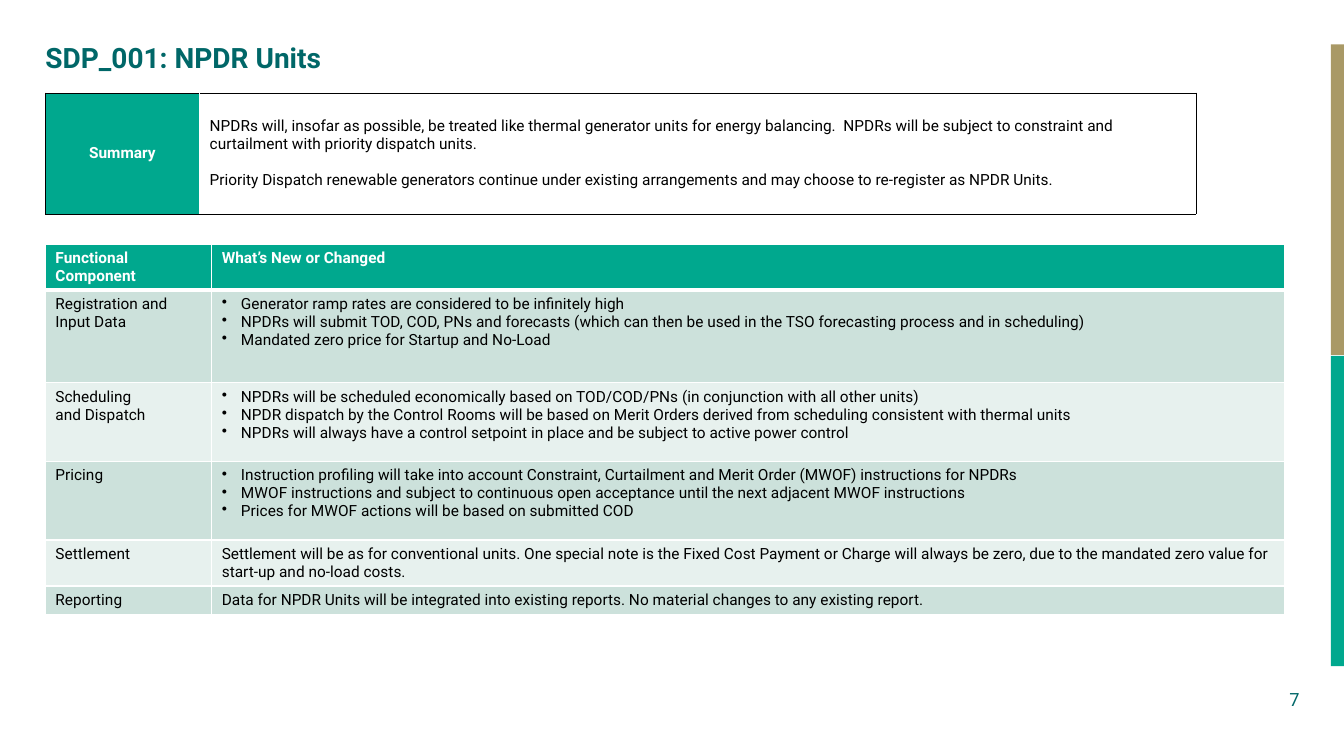
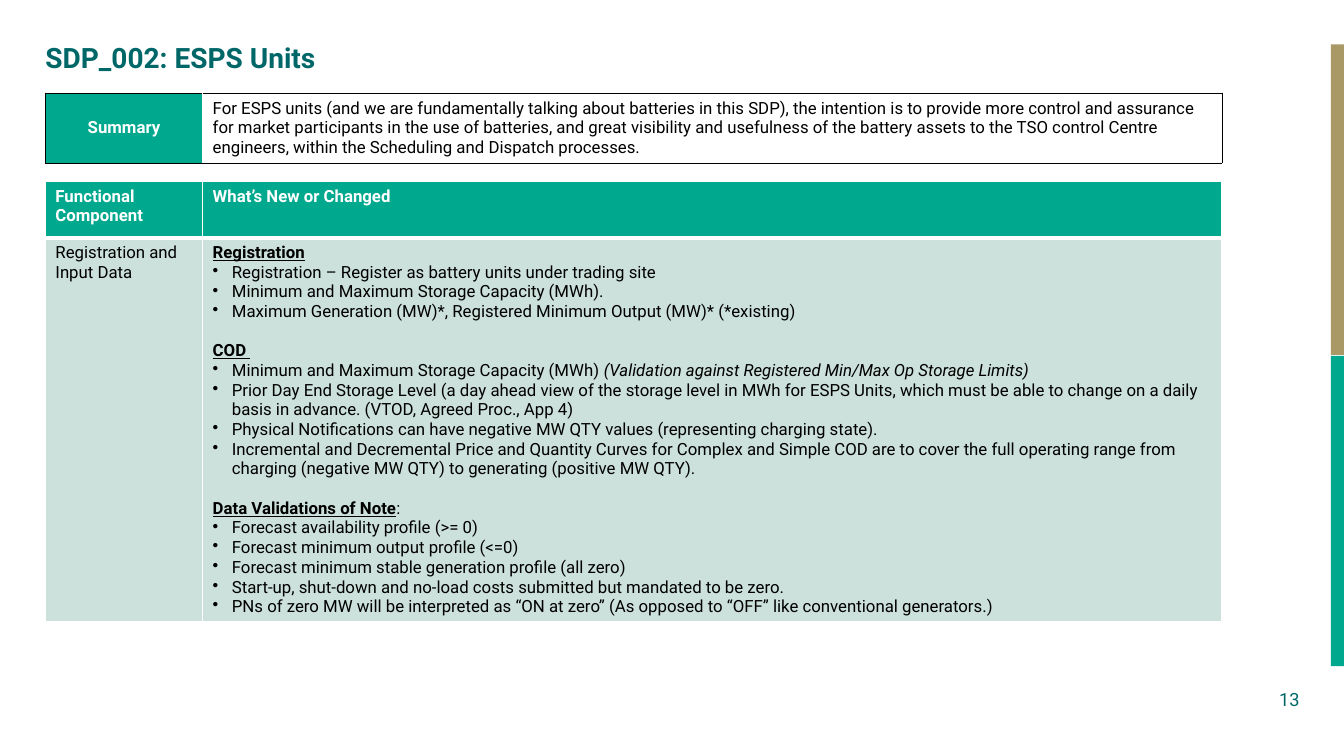
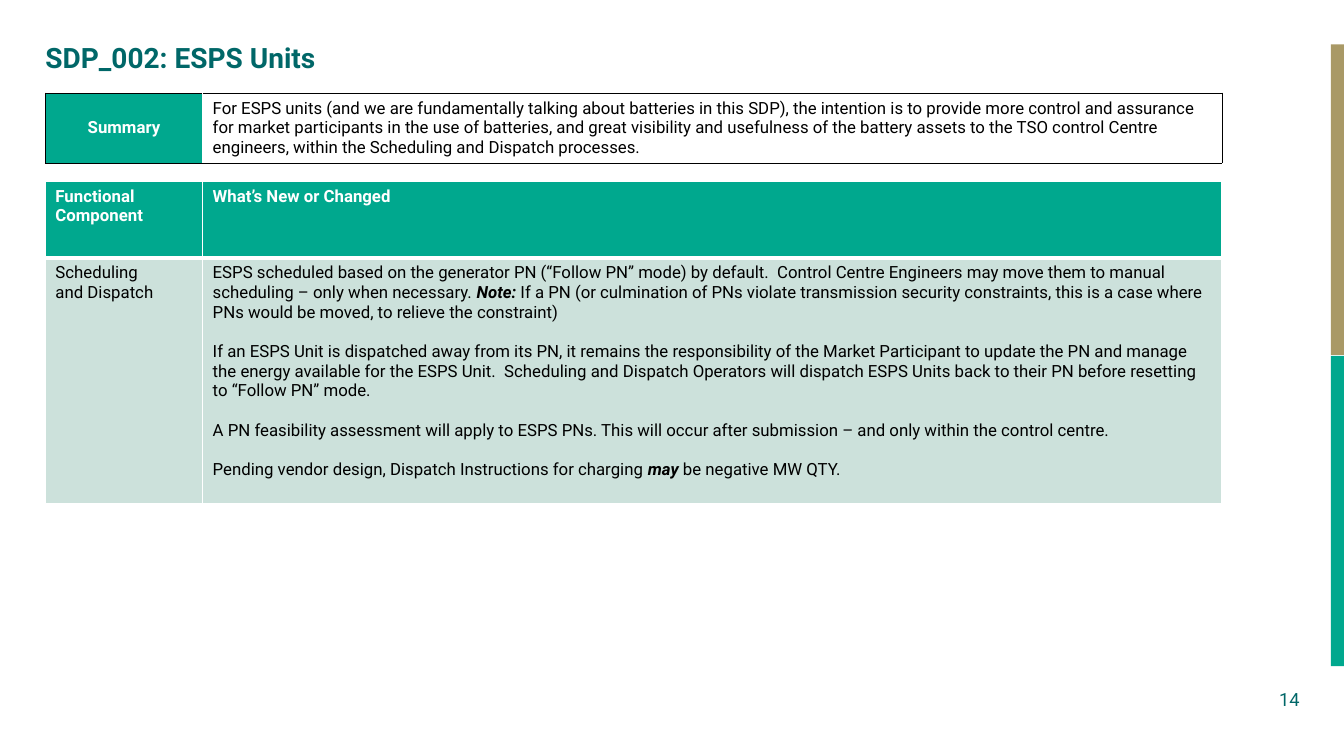
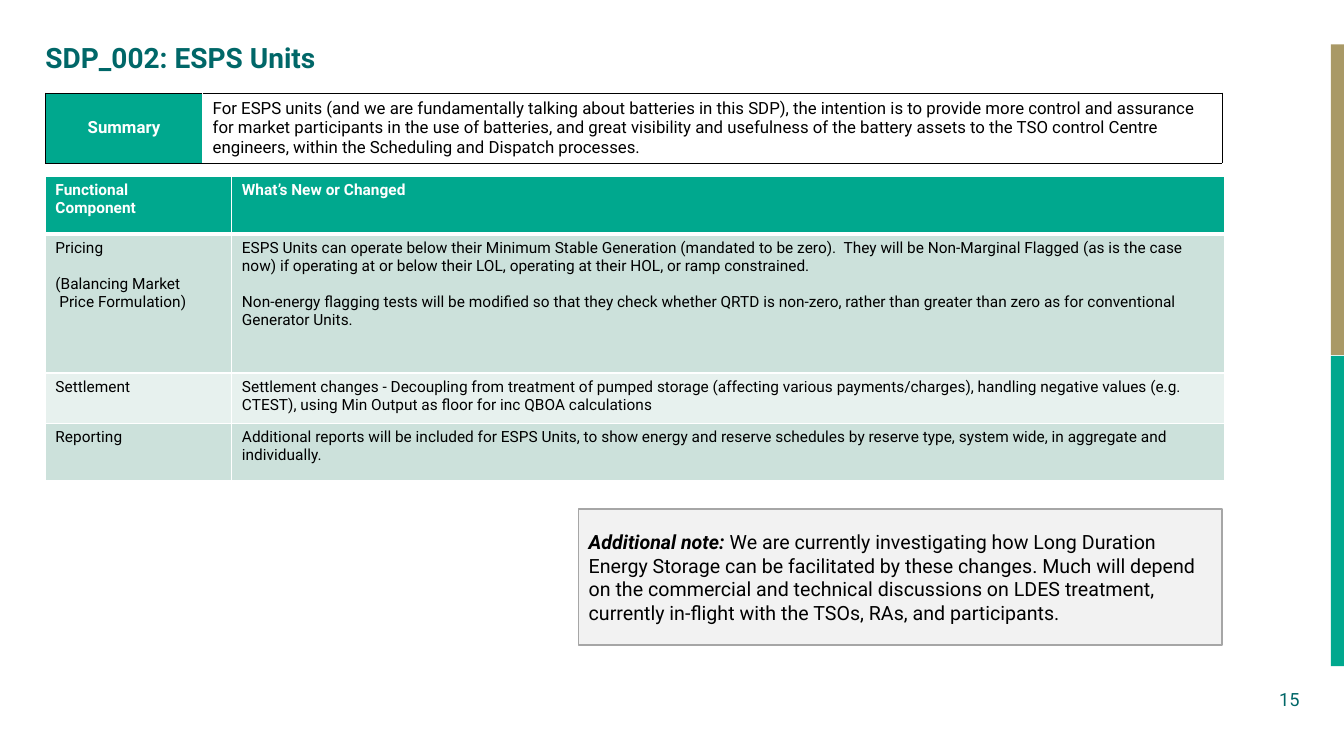
import dataclasses

import pptx
import pptx.dml.color
import pptx.enum.shapes
import pptx.enum.text
import pptx.oxml.ns
import pptx.util
from lxml import etree

Inches = pptx.util.Inches
Pt = pptx.util.Pt
Align = pptx.enum.text.PP_ALIGN
Anchor = pptx.enum.text.MSO_ANCHOR

FONT = "Roboto"
TEAL = "006768"
GREEN = "00A88E"
SAND = "A99966"
BAND_DARK = "CCE1DB"
BAND_LIGHT = "E7F1EE"
NOTE_FILL = "F2F2F2"
NOTE_LINE = "A6A6A6"
WHITE = "FFFFFF"
BLACK = "000000"

LEFT = 0.45
LINE_HEIGHT = 1.17
BULLET_INDENT = 0.19
WHITE_LINE = (WHITE, 1)
HEADER_LINE = (WHITE, 3)
FRAME_LINE = (BLACK, 0.25)

STRONG = {"bold": True, "italic": True}
HEADING = {"bold": True, "underline": True}


@dataclasses.dataclass
class Paragraph:
    """Runs are strings or (text, format) pairs; spaced leaves one line free above."""
    runs: list
    bullet: bool = False
    spaced: bool = False


def bullets(*texts):
    return [Paragraph([text], bullet=True) for text in texts]


def heading(text, *rest, spaced=False):
    return Paragraph([(text, HEADING), *rest], spaced=spaced)


def spaced(*runs):
    return Paragraph(list(runs), spaced=True)


def color(value):
    return pptx.dml.color.RGBColor.from_string(value)


def apply_format(target, values):
    for name, value in values.items():
        setattr(target, name, value)


def add_bullet(paragraph):
    properties = paragraph._p.get_or_add_pPr()
    properties.set("marL", str(Inches(BULLET_INDENT)))
    properties.set("indent", str(-Inches(BULLET_INDENT)))
    character = etree.SubElement(properties, pptx.oxml.ns.qn("a:buChar"))
    character.set("char", "•")


def write_text(text_frame, content, size, text_color, bold=False, align=Align.LEFT):
    """Fill a frame from a string or a list of strings and Paragraphs."""
    items = [content] if isinstance(content, str) else content
    for index, item in enumerate(items):
        if not isinstance(item, Paragraph):
            item = Paragraph([item])
        paragraph = text_frame.paragraphs[0] if index == 0 else text_frame.add_paragraph()
        paragraph.alignment = align
        if item.bullet:
            add_bullet(paragraph)
        if item.spaced:
            paragraph.space_before = Pt(round(size * LINE_HEIGHT, 1))
        for part in item.runs:
            text, extra = (part, {}) if isinstance(part, str) else part
            run = paragraph.add_run()
            run.text = text
            apply_format(run.font, {"name": FONT, "size": Pt(size), "bold": bold, **extra})
            run.font.color.rgb = color(text_color)


def set_frame(text_frame, anchor):
    apply_format(text_frame, {
        "word_wrap": True, "vertical_anchor": anchor,
        "auto_size": pptx.enum.text.MSO_AUTO_SIZE.NONE,
        "margin_left": 0, "margin_top": 0, "margin_right": 0, "margin_bottom": 0,
    })


def add_rectangle(slide, box, fill, line=None):
    shape = slide.shapes.add_shape(
        pptx.enum.shapes.MSO_SHAPE.RECTANGLE, *map(Inches, box))
    shape.shadow.inherit = False
    shape.fill.solid()
    shape.fill.fore_color.rgb = color(fill)
    if line:
        shape.line.color.rgb = color(line)
        shape.line.width = Pt(1)
    else:
        shape.line.fill.background()
    return shape


def set_borders(cell, left, right, top, bottom):
    properties = cell._tc.get_or_add_tcPr()
    sides = {"a:lnL": left, "a:lnR": right, "a:lnT": top, "a:lnB": bottom}
    for tag, (line_color, width) in sides.items():
        line = etree.SubElement(properties, pptx.oxml.ns.qn(tag), w=str(Pt(width)))
        fill = etree.SubElement(line, pptx.oxml.ns.qn("a:solidFill"))
        etree.SubElement(fill, pptx.oxml.ns.qn("a:srgbClr"), val=line_color)


def set_fill(cell, fill):
    cell.fill.solid()
    cell.fill.fore_color.rgb = color(fill)


def add_table(slide, top, columns, heights):
    frame = slide.shapes.add_table(
        len(heights), len(columns), Inches(LEFT), Inches(top),
        Inches(sum(columns)), Inches(sum(heights)))
    table = frame.table
    table.first_row = False
    table.horz_banding = False
    for column, width in zip(table.columns, columns):
        column.width = Inches(width)
    for row, height in zip(table.rows, heights):
        row.height = Inches(height)
    return table


def add_summary(slide, content, columns=(1.56, 10.11), height=0.7, size=12):
    table = add_table(slide, 0.92, columns, [height])
    label, summary = table.cell(0, 0), table.cell(0, 1)
    set_borders(label, FRAME_LINE, WHITE_LINE, FRAME_LINE, FRAME_LINE)
    set_borders(summary, WHITE_LINE, FRAME_LINE, FRAME_LINE, FRAME_LINE)
    for cell, fill in ((label, GREEN), (summary, WHITE)):
        set_fill(cell, fill)
        cell.vertical_anchor = Anchor.MIDDLE
    write_text(label.text_frame, "Summary", size, WHITE, bold=True, align=Align.CENTER)
    write_text(summary.text_frame, content, size, BLACK)


def add_changes(slide, top, columns, heights, rows, size=12,
                component="Functional Component"):
    """Add the table of components and changes below its header row."""
    table = add_table(slide, top, columns, heights)
    for row_index, row in enumerate([(component, "What’s New or Changed"), *rows]):
        is_header = row_index == 0
        band = BAND_DARK if row_index % 2 else BAND_LIGHT
        for column_index, content in enumerate(row):
            cell = table.cell(row_index, column_index)
            set_borders(cell, WHITE_LINE, WHITE_LINE,
                        HEADER_LINE if row_index == 1 else WHITE_LINE,
                        HEADER_LINE if is_header else WHITE_LINE)
            set_fill(cell, GREEN if is_header else band)
            write_text(cell.text_frame, content, size,
                       WHITE if is_header else BLACK, bold=is_header)


def add_slide(presentation, title, number, title_height=0.3):
    """Add a slide with the side bands, the title and the page number."""
    slide = presentation.slides.add_slide(presentation.slide_layouts[5])
    for top, fill in ((0.44, SAND), (3.53, GREEN)):
        add_rectangle(slide, (13.2, top, 0.13, 3.08), fill)

    shape = slide.shapes.title
    apply_format(shape, {"left": Inches(LEFT), "top": Inches(0.44),
                         "width": Inches(12.12), "height": Inches(title_height)})
    set_frame(shape.text_frame, Anchor.TOP)
    write_text(shape.text_frame, title, 20, TEAL, bold=True)
    shape.text_frame.paragraphs[0].line_spacing = 0.9

    page = slide.shapes.add_textbox(*map(Inches, (12.39, 6.61, 0.5, 0.44)))
    set_frame(page.text_frame, Anchor.BOTTOM)
    write_text(page.text_frame, str(number), 13, TEAL, align=Align.RIGHT)
    return slide


def add_note(slide, box, content):
    shape = add_rectangle(slide, box, NOTE_FILL, NOTE_LINE)
    shape.text_frame.word_wrap = True
    shape.text_frame.vertical_anchor = Anchor.MIDDLE
    write_text(shape.text_frame, content, 14, BLACK)


def add_npdr_slide(presentation):
    slide = add_slide(presentation, "SDP_001: NPDR Units", 7, title_height=0.65)
    add_summary(slide, [
        "NPDRs will, insofar as possible, be treated like thermal generator units for energy balancing.  NPDRs will be subject to constraint and curtailment with priority dispatch units.",
        spaced("Priority Dispatch renewable generators continue under existing arrangements and may choose to re-register as NPDR Units."),
    ], columns=(1.53, 9.88), height=1.2, size=11)
    add_changes(slide, 2.42, (1.65, 10.64), (0.44, 0.92, 0.78, 0.78, 0.44, 0.26), [
        (["Registration and", "Input Data"], bullets(
            "Generator ramp rates are considered to be infinitely high",
            "NPDRs will submit TOD, COD, PNs and forecasts (which can then be used in the TSO forecasting process and in scheduling)",
            "Mandated zero price for Startup and No-Load")),
        (["Scheduling", "and Dispatch"], bullets(
            "NPDRs will be scheduled economically based on TOD/COD/PNs (in conjunction with all other units)",
            "NPDR dispatch by the Control Rooms will be based on Merit Orders derived from scheduling consistent with thermal units",
            "NPDRs will always have a control setpoint in place and be subject to active power control")),
        ("Pricing", bullets(
            "Instruction profiling will take into account Constraint, Curtailment and Merit Order (MWOF) instructions for NPDRs",
            "MWOF instructions and subject to continuous open acceptance until the next adjacent MWOF instructions",
            "Prices for MWOF actions will be based on submitted COD")),
        ("Settlement", "Settlement will be as for conventional units. One special note is the Fixed Cost Payment or Charge will always be zero, due to the mandated zero value for start-up and no-load costs."),
        ("Reporting", "Data for NPDR Units will be integrated into existing reports. No material changes to any existing report."),
    ], size=11)


def add_esps_slide(presentation, number, title_height=0.3):
    slide = add_slide(presentation, "SDP_002: ESPS Units", number, title_height)
    add_summary(slide, "For ESPS units (and we are fundamentally talking about batteries in this SDP), the intention is to provide more control and assurance for market participants in the use of batteries, and great visibility and usefulness of the battery assets to the TSO control Centre engineers, within the Scheduling and Dispatch processes.")
    return slide


def add_esps_registration_slide(presentation):
    slide = add_esps_slide(presentation, 13)
    add_changes(slide, 1.8, (1.56, 10.11), (0.56, 3.8), [
        (["Registration and", "Input Data"], [
            heading("Registration"),
            *bullets(
                "Registration – Register as battery units under trading site",
                "Minimum and Maximum Storage Capacity (MWh).",
                "Maximum Generation (MW)*, Registered Minimum Output (MW)* (*existing)"),
            heading("COD ", spaced=True),
            Paragraph([
                "Minimum and Maximum Storage Capacity (MWh) ",
                ("(Validation against Registered Min/Max Op Storage Limits)", {"italic": True}),
            ], bullet=True),
            *bullets(
                "Prior Day End Storage Level (a day ahead view of the storage level in MWh for ESPS Units, which must be able to change on a daily basis in advance. (VTOD, Agreed Proc., App 4)",
                "Physical Notifications can have negative MW QTY values (representing charging state).",
                "Incremental and Decremental Price and Quantity Curves for Complex and Simple COD are to cover the full operating range from charging (negative MW QTY) to generating (positive MW QTY)."),
            heading("Data Validations of Note", ":", spaced=True),
            *bullets(
                "Forecast availability profile (>= 0)",
                "Forecast minimum output profile (<=0)",
                "Forecast minimum stable generation profile (all zero)",
                "Start-up, shut-down and no-load costs submitted but mandated to be zero.",
                "PNs of zero MW will be interpreted as “ON at zero” (As opposed to “OFF” like conventional generators.)"),
        ]),
    ])


def add_esps_scheduling_slide(presentation):
    slide = add_esps_slide(presentation, 14)
    add_changes(slide, 1.8, (1.56, 10.11), (0.76, 2.44), [
        (["Scheduling", "and Dispatch"], [
            Paragraph([
                "ESPS scheduled based on the generator PN (“Follow PN” mode) by default.  Control Centre Engineers may move them to manual scheduling – only when necessary. ",
                ("Note:", STRONG),
                " If a PN (or culmination of PNs violate transmission security constraints, this is a case where PNs would be moved, to relieve the constraint)"]),
            spaced("If an ESPS Unit is dispatched away from its PN, it remains the responsibility of the Market Participant to update the PN and manage the energy available for the ESPS Unit.  Scheduling and Dispatch Operators will dispatch ESPS Units back to their PN before resetting to “Follow PN” mode."),
            spaced("A PN feasibility assessment will apply to ESPS PNs. This will occur after submission – and only within the control centre."),
            spaced("Pending vendor design, Dispatch Instructions for charging ",
                   ("may", STRONG), " be negative MW QTY."),
        ]),
    ])


def add_esps_pricing_slide(presentation):
    slide = add_esps_slide(presentation, 15, title_height=0.35)
    add_changes(slide, 1.75, (1.85, 9.85), (0.57, 1.38, 0.5, 0.57), [
        (["Pricing", spaced("(Balancing Market"), " Price Formulation)"], [
            "ESPS Units can operate below their Minimum Stable Generation (mandated to be zero).  They will be Non-Marginal Flagged (as is the case now) if operating at or below their LOL, operating at their HOL, or ramp constrained.",
            spaced("Non-energy flagging tests will be modified so that they check whether QRTD is non-zero, rather than greater than zero as for conventional Generator Units."),
        ]),
        ("Settlement", "Settlement changes - Decoupling from treatment of pumped storage (affecting various payments/charges), handling negative values (e.g. CTEST), using Min Output as floor for inc QBOA calculations"),
        ("Reporting", "Additional reports will be included for ESPS Units, to show energy and reserve schedules by reserve type, system wide, in aggregate and individually."),
    ], size=11, component=["Functional", "Component"])
    add_note(slide, (5.74, 5.05, 6.38, 1.35), [Paragraph([
        ("Additional note: ", STRONG),
        "We are currently investigating how Long Duration Energy Storage can be facilitated by these changes. Much will depend on the commercial and technical discussions on LDES treatment, currently in-flight with the TSOs, RAs, and participants.",
    ])])


def main():
    presentation = pptx.Presentation()
    presentation.slide_width = Inches(13.33)
    presentation.slide_height = Inches(7.5)
    add_npdr_slide(presentation)
    add_esps_registration_slide(presentation)
    add_esps_scheduling_slide(presentation)
    add_esps_pricing_slide(presentation)
    presentation.save("out.pptx")


if __name__ == "__main__":
    main()
